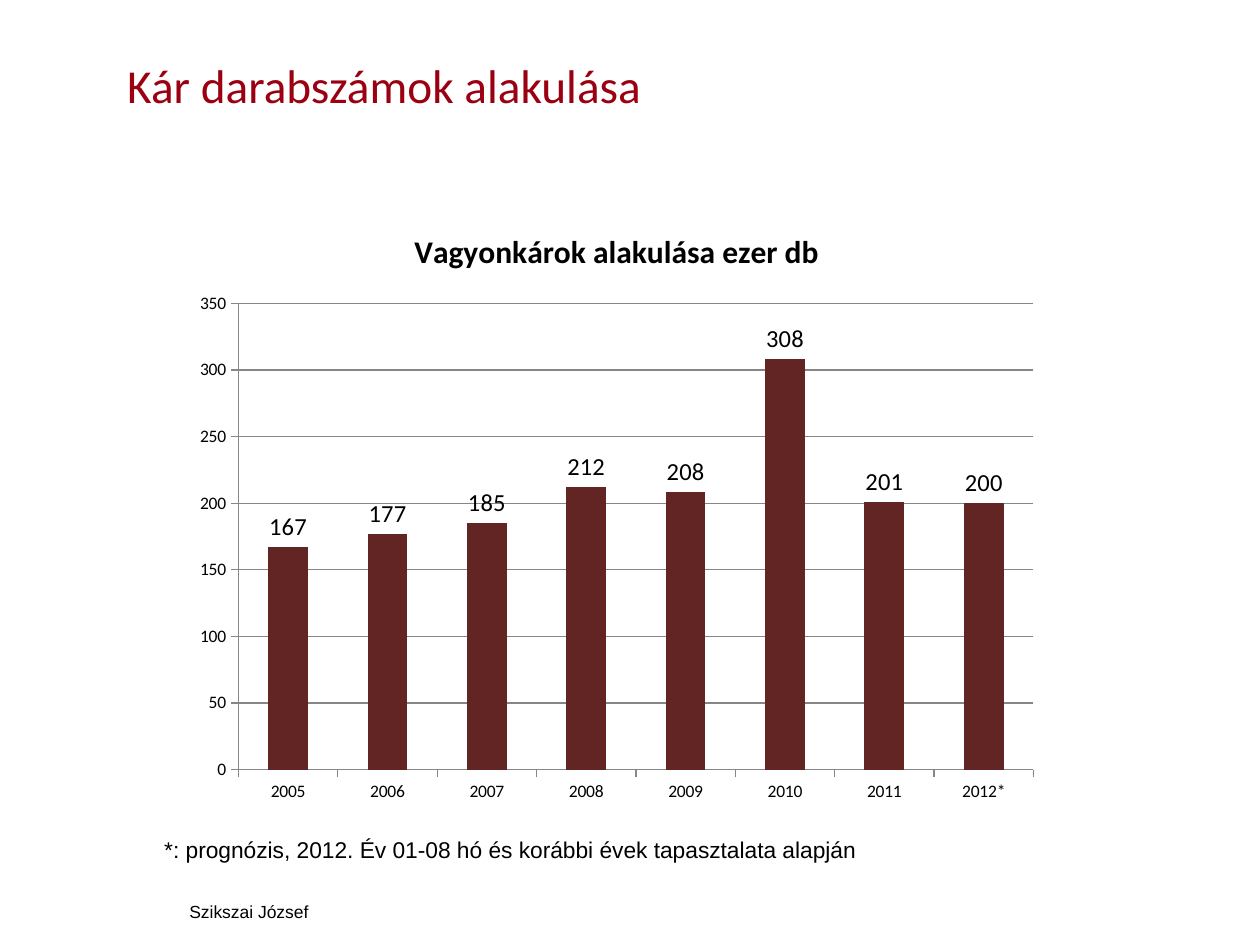
"""Builds the slide on claim counts with a column chart of property claims."""
from pptx import Presentation
from pptx.chart.data import CategoryChartData
from pptx.dml.color import RGBColor
from pptx.enum.chart import XL_CHART_TYPE, XL_LABEL_POSITION, XL_TICK_MARK
from pptx.enum.text import MSO_ANCHOR, PP_ALIGN
from pptx.util import Inches, Pt


def rgb(value):
    return RGBColor.from_string(value)


def write(sp, box, text, para, font, color, **frame):
    sp.left, sp.top, sp.width, sp.height = [Inches(v) for v in box]
    tf = sp.text_frame
    for name, value in {"word_wrap": True, **frame}.items():
        setattr(tf, name, value)
    p = tf.paragraphs[0]
    p.alignment = para
    r = p.add_run()
    r.text = text
    for name, value in font.items():
        setattr(r.font, name, value)
    r.font.color.rgb = rgb(color)


prs = Presentation()
prs.slide_width, prs.slide_height = Inches(10), Inches(7.5)
s = prs.slides.add_slide(prs.slide_layouts[5])
no_margins = {f"margin_{side}": 0 for side in ("left", "top", "right", "bottom")}

write(s.shapes.title, (1.01, 0.4, 6.21, 0.55), "Kár darabszámok alakulása", PP_ALIGN.LEFT,
      {"name": "Calibri", "size": Pt(27)}, "9B0012",
      vertical_anchor=MSO_ANCHOR.MIDDLE, **no_margins)

data = CategoryChartData()
data.categories = ["2005", "2006", "2007", "2008", "2009", "2010", "2011", "2012*"]
data.add_series("Vagyonkárok", (167, 177, 185, 212, 208, 308, 201, 200))
chart = s.shapes.add_chart(XL_CHART_TYPE.COLUMN_CLUSTERED, Inches(1.45), Inches(1.63),
                           Inches(6.89), Inches(4.83), data).chart
chart.has_legend = False
chart.font.name, chart.font.size = "Calibri", Pt(10)
chart.font.color.rgb = rgb("000000")

chart.has_title = True
chart.chart_title.include_in_layout = False
p = chart.chart_title.text_frame.paragraphs[0]
r = p.add_run()
r.text = "Vagyonkárok alakulása ezer db"
for name, value in {"name": "Calibri", "size": Pt(18), "bold": True}.items():
    setattr(r.font, name, value)
r.font.color.rgb = rgb("000000")

for axis in (chart.category_axis, chart.value_axis):
    axis.major_tick_mark = XL_TICK_MARK.OUTSIDE
    axis.format.line.color.rgb = rgb("868686")
    axis.format.line.width = Pt(0.75)
values = chart.value_axis
for name, value in {"minimum_scale": 0, "maximum_scale": 350, "major_unit": 50,
                    "has_major_gridlines": True}.items():
    setattr(values, name, value)
values.major_gridlines.format.line.color.rgb = rgb("868686")
values.major_gridlines.format.line.width = Pt(0.75)

plot = chart.plots[0]
plot.gap_width = 150
plot.vary_by_categories = False
fill = plot.series[0].format.fill
fill.solid()
fill.fore_color.rgb = rgb("632523")
plot.has_data_labels = True
labels = plot.data_labels
labels.show_value = True
labels.position = XL_LABEL_POSITION.OUTSIDE_END
for name, value in {"name": "Calibri", "size": Pt(14)}.items():
    setattr(labels.font, name, value)
labels.font.color.rgb = rgb("000000")

notes = [
    ((1.02, 6.63, 6.05, 0.22),
     "*: prognózis, 2012. Év 01-08 hó és korábbi évek tapasztalata alapján", 13, no_margins),
    ((1.02, 7.07, 1.91, 0.33), "Szikszai József", 10, {"vertical_anchor": MSO_ANCHOR.MIDDLE}),
]
for box, text, size, frame in notes:
    sp = s.shapes.add_textbox(0, 0, 0, 0)
    write(sp, box, text, PP_ALIGN.CENTER, {"name": "Arial", "size": Pt(size)}, "000000", **frame)

prs.save("out.pptx")
